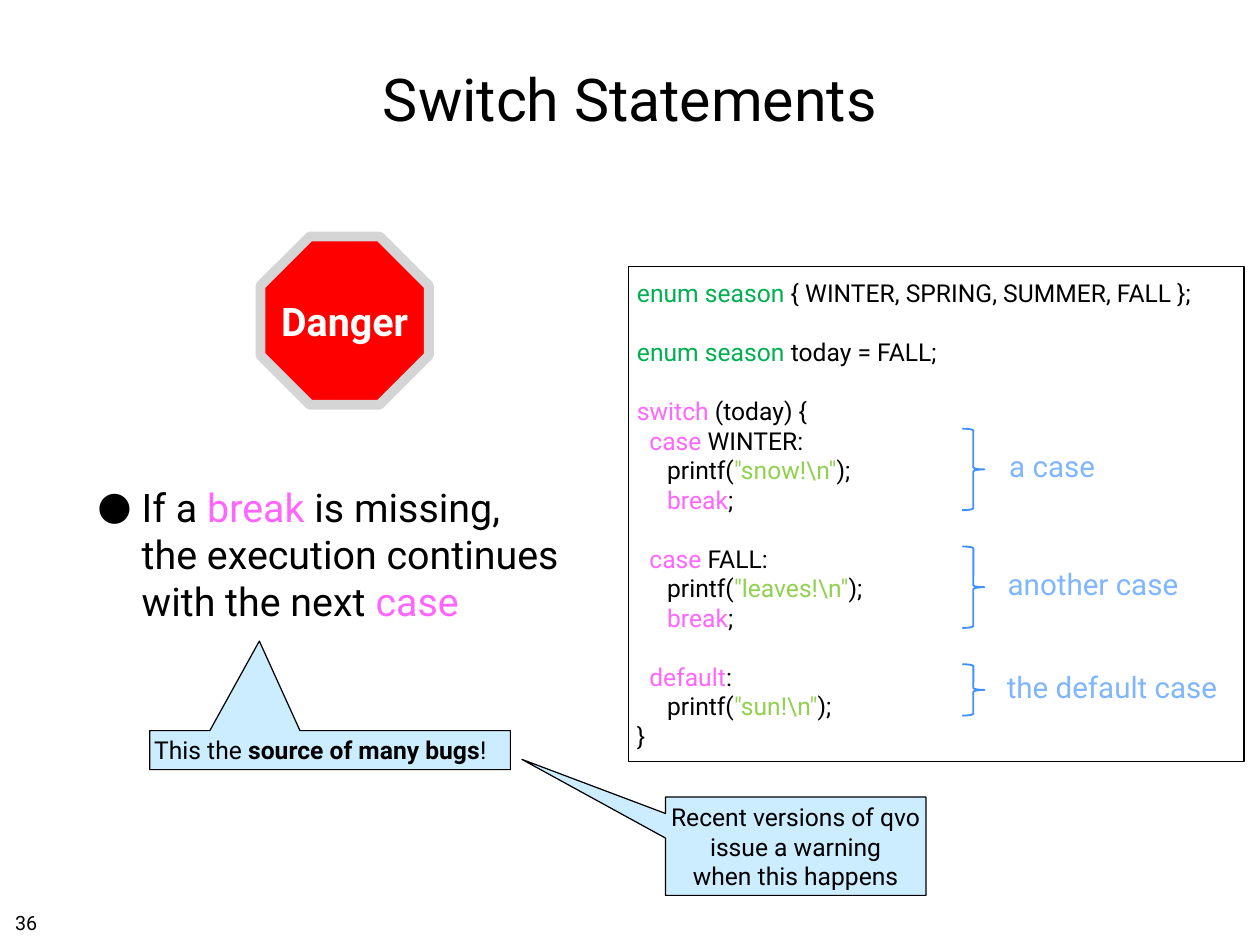
from lxml.etree import SubElement
from pptx import Presentation
from pptx.dml.color import RGBColor
from pptx.enum.shapes import MSO_SHAPE
from pptx.enum.text import MSO_ANCHOR, PP_ALIGN
from pptx.oxml.ns import qn
from pptx.util import Inches, Pt

FONT = "Roboto"
COLORS = {
    "black": "000000", "white": "FFFFFF", "type": "00B050",
    "keyword": "FF66FF", "string": "92D050", "callout": "CCECFF",
    "red": "FF0000", "rim": "D6D5D5", "brace": "4091FF", "label": "80B5FF",
}

# Content: each line is a list of (text, colour) spans
TITLE = "Switch Statements"
RULE = [
    [("If a ", "black"), ("break", "keyword"), (" is missing,", "black")],
    [("the execution continues", "black")],
    [("with the next ", "black"), ("case", "keyword")],
]
BUGS = [[("This the ", "black"), ("source of many bugs", "black", True), ("!", "black")]]
WARNING = [
    [("Recent versions of qvo", "black")],
    [("issue a warning", "black")],
    [("when this happens", "black")],
]
BREAK = (2, False, [("break", "keyword"), (";", "black")])


def print_line(message):
    return 2, False, [("printf(", "black"), (f'"{message}\\n"', "string"), (");", "black")]


# Code lines: (indent level, gap above, spans)
CODE = [
    (0, False, [("enum season", "type"), (" { WINTER, SPRING, SUMMER, FALL };", "black")]),
    (0, True, [("enum season ", "type"), ("today = FALL;", "black")]),
    (0, True, [("switch ", "keyword"), ("(today) {", "black")]),
    (1, False, [("case", "keyword"), (" WINTER:", "black")]),
    print_line("snow!"),
    BREAK,
    (1, True, [("case ", "keyword"), ("FALL:", "black")]),
    print_line("leaves!"),
    BREAK,
    (1, True, [("default", "keyword"), (":", "black")]),
    print_line("sun!"),
    (0, False, [("}", "black")]),
]
CODE_INDENTS = [0, 0.14, 0.34]
CODE_GAP = Pt(24)

# Brace labels: (text, brace height, label width)
CASES = [("a case", 0.92, 1.23), ("another case", 0.92, 2.15), ("the default case", 0.58, 2.58)]
BRACE_TOP, BRACE_STEP = 4.84, 1.33


def color(name):
    return RGBColor.from_string(COLORS[name])


def add_spans(para, spans, size):
    for text, tint, *bold in spans:
        span = para.add_run()
        span.text = text
        span.font.name = FONT
        span.font.size = Pt(size)
        span.font.bold = bool(bold)
        span.font.color.rgb = color(tint)


def add_lines(para, lines, size):
    for index, spans in enumerate(lines):
        if index:
            para.add_line_break()
        add_spans(para, spans, size)


def set_frame(shape, inset, anchor=MSO_ANCHOR.MIDDLE, align=PP_ALIGN.CENTER, wrap=False):
    frame = shape.text_frame
    frame.margin_left = frame.margin_right = Inches(inset)
    frame.margin_top = frame.margin_bottom = Inches(inset)
    frame.vertical_anchor = anchor
    frame.word_wrap = wrap
    frame.paragraphs[0].alignment = align
    return frame.paragraphs[0]


def add_box(slide, place):
    return slide.shapes.add_textbox(*map(Inches, place))


def add_shape(slide, kind, place, line, width, fill=None):
    shape = slide.shapes.add_shape(kind, *map(Inches, place))
    shape.shadow.inherit = False
    shape.line.color.rgb = color(line)
    shape.line.width = Pt(width)
    if fill:
        shape.fill.solid()
        shape.fill.fore_color.rgb = color(fill)
    else:
        shape.fill.background()
    return shape


def add_callout(slide, place, tip, lines, align, wrap):
    callout = add_shape(slide, MSO_SHAPE.RECTANGULAR_CALLOUT, place, "black", 1, "callout")
    callout.adjustments[0], callout.adjustments[1] = tip
    add_lines(set_frame(callout, 0.05, align=align, wrap=wrap), lines, 20)


def add_code(slide):
    panel = add_shape(slide, MSO_SHAPE.RECTANGLE, (7.09, 3.01, 6.95, 5.59), "black", 1)
    para = set_frame(panel, 0.1, align=PP_ALIGN.LEFT, wrap=True)
    for index, (level, gap, spans) in enumerate(CODE):
        if index:
            para = panel.text_frame.add_paragraph()
        para.alignment = PP_ALIGN.LEFT
        para.space_before = CODE_GAP if gap else Pt(0)
        para._p.get_or_add_pPr().set("marL", str(Inches(CODE_INDENTS[level])))
        add_spans(para, spans, 20)


def add_rule(slide):
    box = add_box(slide, (1.04, 5.39, 5.7, 1.75))
    para = set_frame(box, 0.06, MSO_ANCHOR.TOP, PP_ALIGN.LEFT, True)
    properties = para._p.get_or_add_pPr()
    properties.set("marL", str(Inches(0.5)))
    properties.set("indent", str(Inches(-0.5)))
    SubElement(properties, qn("a:buFont")).set("typeface", FONT)
    SubElement(properties, qn("a:buChar")).set("char", "●")
    add_lines(para, RULE, 32)


def main():
    deck = Presentation()
    deck.slide_width, deck.slide_height = Inches(14.22), Inches(10.67)
    page = deck.slides.add_slide(deck.slide_layouts[5])

    # Title and bullet
    title = page.shapes.title
    title.left, title.top, title.width, title.height = map(Inches, (1.04, 0.28, 12.14, 1.64))
    add_spans(set_frame(title, 0.06, wrap=True), [(TITLE, "black")], 48)
    add_rule(page)

    # Callouts
    add_callout(page, (1.69, 8.25, 4.07, 0.44), (-0.196, -2.798), BUGS, PP_ALIGN.LEFT, True)
    add_callout(page, (7.51, 9, 2.94, 1.11), (-1.051, -0.884), WARNING, PP_ALIGN.CENTER, False)

    # Danger sign
    sign = add_shape(page, MSO_SHAPE.OCTAGON, (2.94, 2.67, 1.9, 1.9), "rim", 8, "red")
    add_spans(set_frame(sign, 0.06), [("Danger", "white", True)], 32)

    # Code with its braces and labels
    add_code(page)
    for index, (text, height, width) in enumerate(CASES):
        top = BRACE_TOP + index * BRACE_STEP
        add_shape(page, MSO_SHAPE.RIGHT_BRACE, (10.86, top, 0.25, height), "brace", 1.5)
        label = add_box(page, (11.26, top + height / 2 - 0.29, width, 0.5))
        add_spans(set_frame(label, 0.05, MSO_ANCHOR.TOP), [(text, "label")], 24)

    # Page number
    number = add_box(page, (0.11, 10.23, 0.37, 0.35))
    add_spans(set_frame(number, 0.06, MSO_ANCHOR.TOP, PP_ALIGN.LEFT), [("36", "black")], 16)

    deck.save("out.pptx")


if __name__ == "__main__":
    main()
